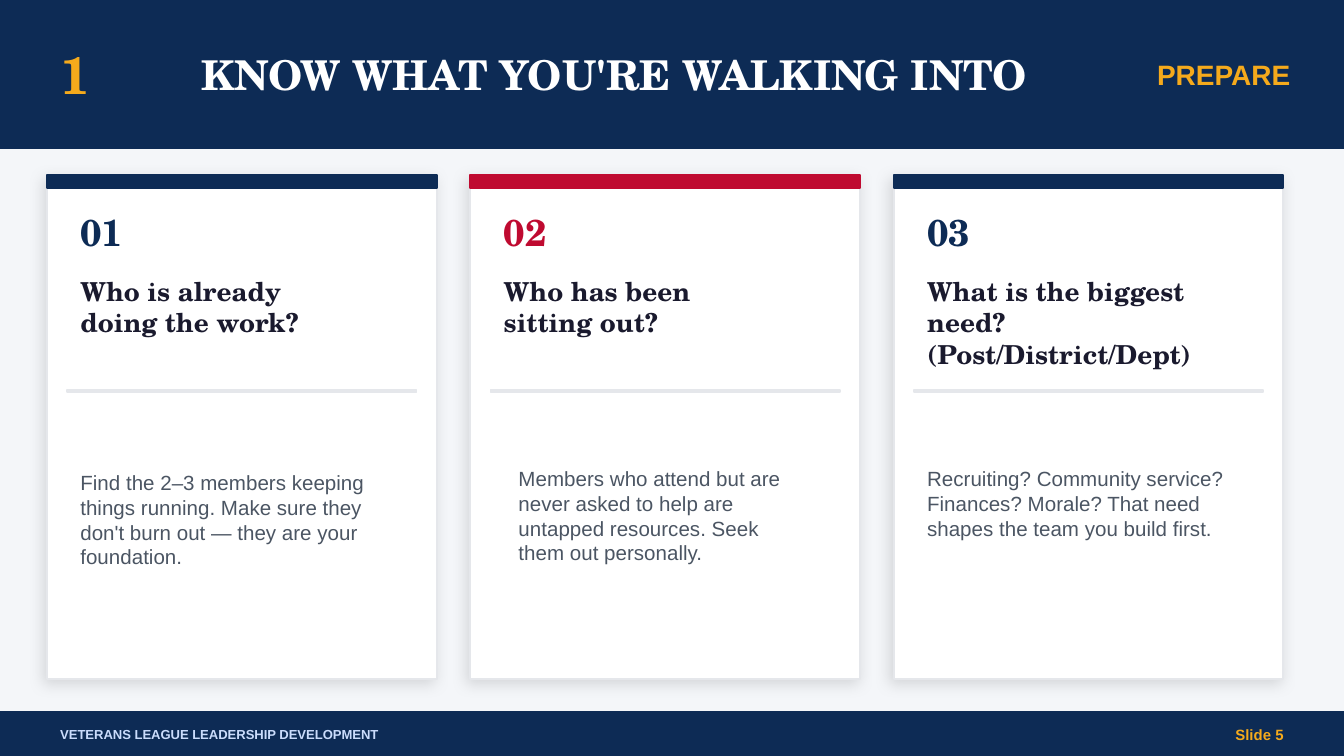
from dataclasses import dataclass

from lxml.etree import SubElement
from pptx import Presentation
from pptx.dml.color import RGBColor as Color
from pptx.enum.shapes import MSO_SHAPE as Shape
from pptx.enum.text import MSO_ANCHOR as Anchor, MSO_AUTO_SIZE as AutoSize, PP_ALIGN as Align
from pptx.oxml.ns import qn
from pptx.util import Pt


@dataclass(frozen=True)
class Theme:
    """Colours, fonts and type sizes of the deck."""
    navy: str = "0D2B55"
    red: str = "BF0A30"
    gold: str = "F5AA1C"
    white: str = "FFFFFF"
    paper: str = "F4F6F9"
    border: str = "E5E7EB"
    ink: str = "1A1A2E"
    grey: str = "4B5563"
    pale: str = "CADCFC"
    serif: str = "TeX Gyre Schola"
    sans: str = "Arial"
    chapter: float = 28
    title: float = 22
    number: float = 20
    tag: float = 15
    heading: float = 14
    body: float = 11
    page_number: float = 8
    footer: float = 7


def apply(target, values):
    """Set every attribute named in a dict of format values."""
    for name, value in values.items():
        setattr(target, name, value)


class Painter:
    """Draws styled elements on the current page."""

    def __init__(self, page, theme):
        """Keep the page and theme, and paint the background."""
        self.page, self.theme = page, theme
        page.background.fill.solid()
        page.background.fill.fore_color.rgb = Color.from_string(theme.paper)

    def block(self, area, fill, line=None):
        """Draw a filled rectangle with a one point outline."""
        shape = self.page.shapes.add_shape(Shape.RECTANGLE, *map(Pt, area))
        shape.fill.solid()
        shape.fill.fore_color.rgb = Color.from_string(fill)
        shape.line.color.rgb = Color.from_string(line or fill)
        shape.line.width = Pt(1)
        shape.shadow.inherit = False
        return shape

    def panel(self, area):
        """Draw a white card with a soft shadow."""
        shape = self.block(area, self.theme.white, self.theme.border)
        effects = shape.element.spPr.find(qn("a:effectLst"))
        shadow = SubElement(effects, qn("a:outerShdw"), blurRad=str(Pt(8)),
                            dist=str(Pt(3)), dir=str(135 * 60000),
                            algn="bl", rotWithShape="0")
        tint = SubElement(shadow, qn("a:srgbClr"), val="000000")
        SubElement(tint, qn("a:alpha"), val="12000")

    def fill_text(self, box, lines, font, size, color, bold=True,
                  align=Align.LEFT, anchor=Anchor.MIDDLE):
        """Write one paragraph per line in a text holder."""
        frame = box.text_frame
        frame.text = "\n".join(lines)
        apply(frame, {"word_wrap": True, "auto_size": AutoSize.NONE,
                      "vertical_anchor": anchor,
                      "margin_left": Pt(7.2), "margin_right": Pt(7.2),
                      "margin_top": Pt(3.6), "margin_bottom": Pt(3.6)})
        for para in frame.paragraphs:
            para.alignment = align
            for span in para.runs:
                apply(span.font, {"name": font, "size": Pt(size), "bold": bold})
                span.font.color.rgb = Color.from_string(color)

    def text(self, area, lines, *style, **layout):
        """Add a text box."""
        box = self.page.shapes.add_textbox(*map(Pt, area))
        self.fill_text(box, lines, *style, **layout)

    def title(self, area, words, *style):
        """Move the title placeholder to the front and format it."""
        box = self.page.shapes.title
        apply(box, dict(zip(("left", "top", "width", "height"), map(Pt, area))))
        self.fill_text(box, [words], *style)
        box.element.getparent().append(box.element)

    def card(self, left, number, color, heading, body, body_area):
        """Draw a numbered question card."""
        theme, inner = self.theme, left + 10.8
        self.panel((left, 93.6, 208.8, 270))
        self.block((left, 93.6, 208.8, 7.2), color)
        self.text((inner, 104.4, 43.2, 39.6), [f"{number:02}"],
                  theme.serif, theme.number, color)
        self.text((inner, 144, 187.2, 61.2), heading,
                  theme.serif, theme.heading, theme.ink, anchor=Anchor.TOP)
        self.block((inner, 208.8, 187.2, 1.44), theme.border)
        shift, top, width, height = body_area
        self.text((inner + shift, top, width, height), [body],
                  theme.sans, theme.body, theme.grey, bold=False, anchor=Anchor.TOP)


CARDS = [
    (Theme.navy, ["Who is already", "doing the work?"],
     "Find the 2–3 members keeping things running. Make sure they don't burn out "
     "— they are your foundation.", (0, 248.4, 187.2, 100)),
    (Theme.red, ["Who has been", "sitting out?"],
     "Members who attend but are never asked to help are untapped resources. "
     "Seek them out personally.", (7.92, 246.24, 168.48, 100)),
    (Theme.navy, ["What is the biggest need? (Post/District/Dept)"],
     "Recruiting? Community service? Finances? Morale? That need shapes the team "
     "you build first.", (0, 246.24, 187.2, 100)),
]


def main():
    """Build the deck and save it."""
    deck = Presentation()
    deck.slide_width, deck.slide_height = Pt(720), Pt(405)
    theme = Theme()
    painter = Painter(deck.slides.add_slide(deck.slide_layouts[5]), theme)

    painter.block((0, 0, 720, 79.2), theme.navy)
    painter.text((25.2, 0, 72, 79.2), ["1"], theme.serif, theme.chapter, theme.gold)
    painter.title((100.8, 0, 590.4, 79.2), "KNOW WHAT YOU'RE WALKING INTO",
                  theme.serif, theme.title, theme.white)
    painter.text((612, 0, 86.4, 79.2), ["PREPARE"],
                 theme.sans, theme.tag, theme.gold, align=Align.RIGHT)

    for index, card in enumerate(CARDS):
        painter.card(25.2 + 226.8 * index, index + 1, *card)

    painter.block((0, 381.6, 720, 23.4), theme.navy)
    painter.text((25.2, 381.6, 432, 23.4), ["VETERANS LEAGUE LEADERSHIP DEVELOPMENT"],
                 theme.sans, theme.footer, theme.pale)
    painter.text((540, 381.6, 154.8, 23.4), ["Slide 5"],
                 theme.sans, theme.page_number, theme.gold, align=Align.RIGHT)
    deck.save("out.pptx")


if __name__ == "__main__":
    main()
